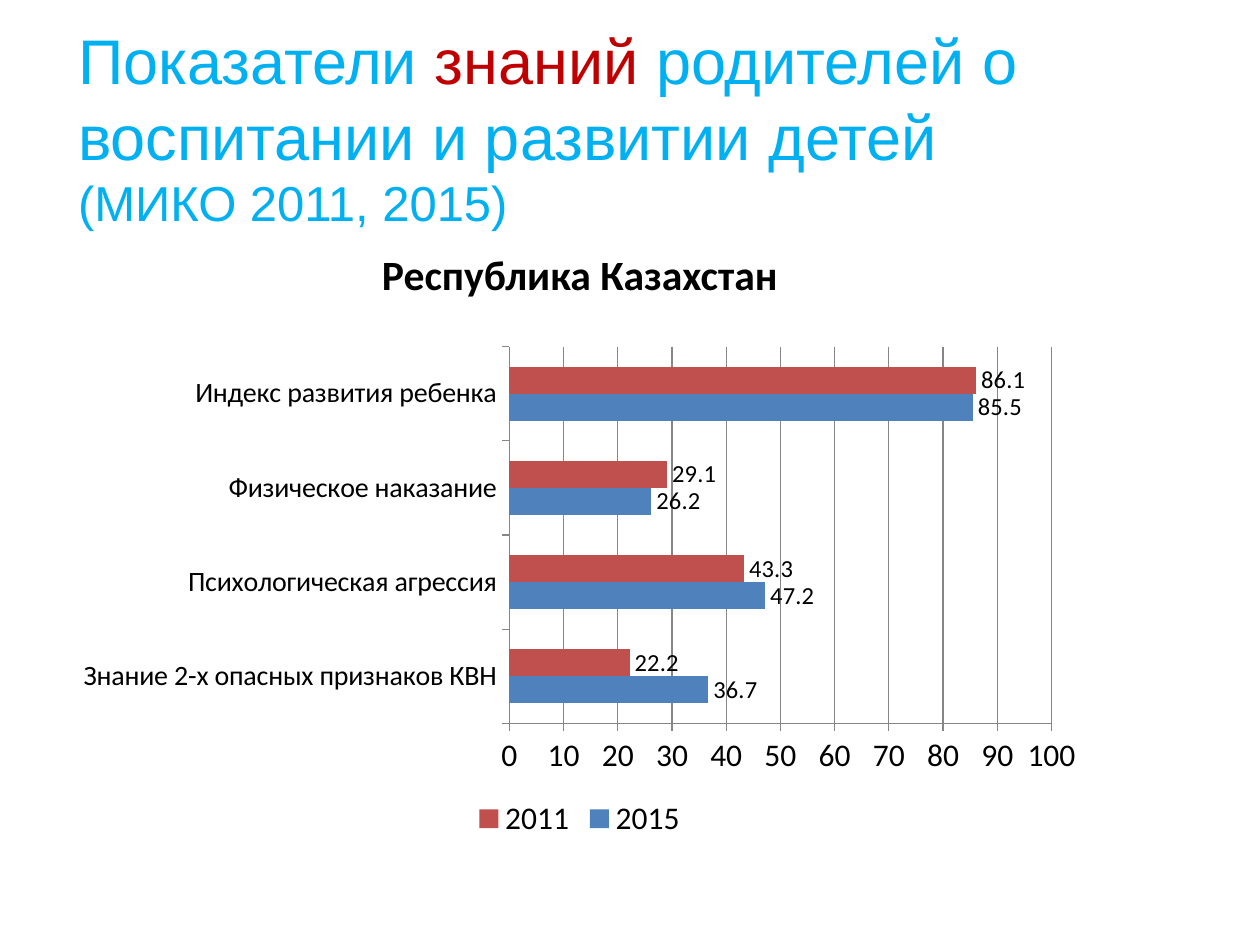
from pptx import Presentation
from pptx.chart.data import CategoryChartData as ChartData
from pptx.dml.color import RGBColor
from pptx.enum.chart import XL_CHART_TYPE as Kind, XL_LABEL_POSITION as Spot
from pptx.enum.chart import XL_LEGEND_POSITION as Side, XL_TICK_MARK as Tick
from pptx.enum.text import MSO_ANCHOR as Anchor, MSO_AUTO_SIZE as Fit, PP_ALIGN as Align
from pptx.util import Inches, Pt

BLUE, RED = "00B0F0", "C00000"
CATS = ["Знание 2-х опасных признаков КВН", "Психологическая агрессия",
        "Физическое наказание", "Индекс развития ребенка"]
ROWS = [("2015", (36.7, 47.2, 26.2, 85.5), "4F81BD"),
        ("2011", (22.2, 43.3, 29.1, 86.1), "C0504D")]


def tint(code):
    return RGBColor.from_string(code)


def style(font, size, name, code):
    font.size, font.name = Pt(size), name
    font.color.rgb = tint(code)


def add_run(para, text, size, name, code):
    run = para.add_run()
    run.text = text
    style(run.font, size, name, code)
    return run


def add_title(slide, box):
    title = slide.shapes.title
    title.left, title.top, title.width, title.height = map(Inches, box)
    frame = title.text_frame
    frame.word_wrap, frame.auto_size = True, Fit.NONE
    frame.vertical_anchor = Anchor.TOP
    lines = [(36, [("Показатели ", BLUE), ("знаний", RED),
                   (" родителей о воспитании и развитии детей", BLUE)]),
             (28, [("(МИКО 2011, 2015)", BLUE)])]
    for i, (size, parts) in enumerate(lines):
        para = frame.add_paragraph() if i else frame.paragraphs[0]
        para.alignment = Align.LEFT
        for text, code in parts:
            add_run(para, text, size, "Arial", code)


def add_head(slide, box):
    frame = slide.shapes.add_textbox(*map(Inches, box)).text_frame
    frame.word_wrap = True
    frame.vertical_anchor = Anchor.MIDDLE
    para = frame.paragraphs[0]
    para.alignment = Align.CENTER
    add_run(para, "Республика Казахстан", 23.8, "Calibri", "000000").font.bold = True


def add_bars(slide, box):
    data = ChartData()
    data.categories = CATS
    for name, vals, _ in ROWS:
        data.add_series(name, vals)
    chart = slide.shapes.add_chart(Kind.BAR_CLUSTERED, *map(Inches, box), data).chart
    style(chart.font, 18, "Calibri", "000000")
    chart.has_title = False
    chart.has_legend = True
    chart.legend.position = Side.BOTTOM
    chart.legend.include_in_layout = False

    cat, val = chart.category_axis, chart.value_axis
    for axis in (cat, val):
        axis.major_tick_mark = Tick.OUTSIDE
        axis.minor_tick_mark = Tick.NONE
        axis.format.line.color.rgb = tint("868686")
    cat.tick_labels.font.size = Pt(16)
    val.minimum_scale, val.maximum_scale, val.major_unit = 0, 100, 10
    val.has_major_gridlines = True
    val.major_gridlines.format.line.color.rgb = tint("868686")

    plot = chart.plots[0]
    plot.gap_width, plot.overlap, plot.vary_by_categories = 150, 0, False
    for bars, (_, _, code) in zip(plot.series, ROWS):
        bars.format.fill.solid()
        bars.format.fill.fore_color.rgb = tint(code)
        labels = bars.data_labels
        labels.show_value = True
        labels.position = Spot.OUTSIDE_END
        style(labels.font, 14, "Calibri", "000000")


def main():
    deck = Presentation()
    deck.slide_width, deck.slide_height = Inches(10), Inches(7.5)
    slide = deck.slides.add_slide(deck.slide_layouts[5])
    add_head(slide, (0.5, 1.68, 8.2, 0.99))
    add_bars(slide, (0.5, 2.67, 8.2, 4.03))
    add_title(slide, (0.52, 0.12, 8.75, 1.78))
    deck.save("out.pptx")


if __name__ == "__main__":
    main()
